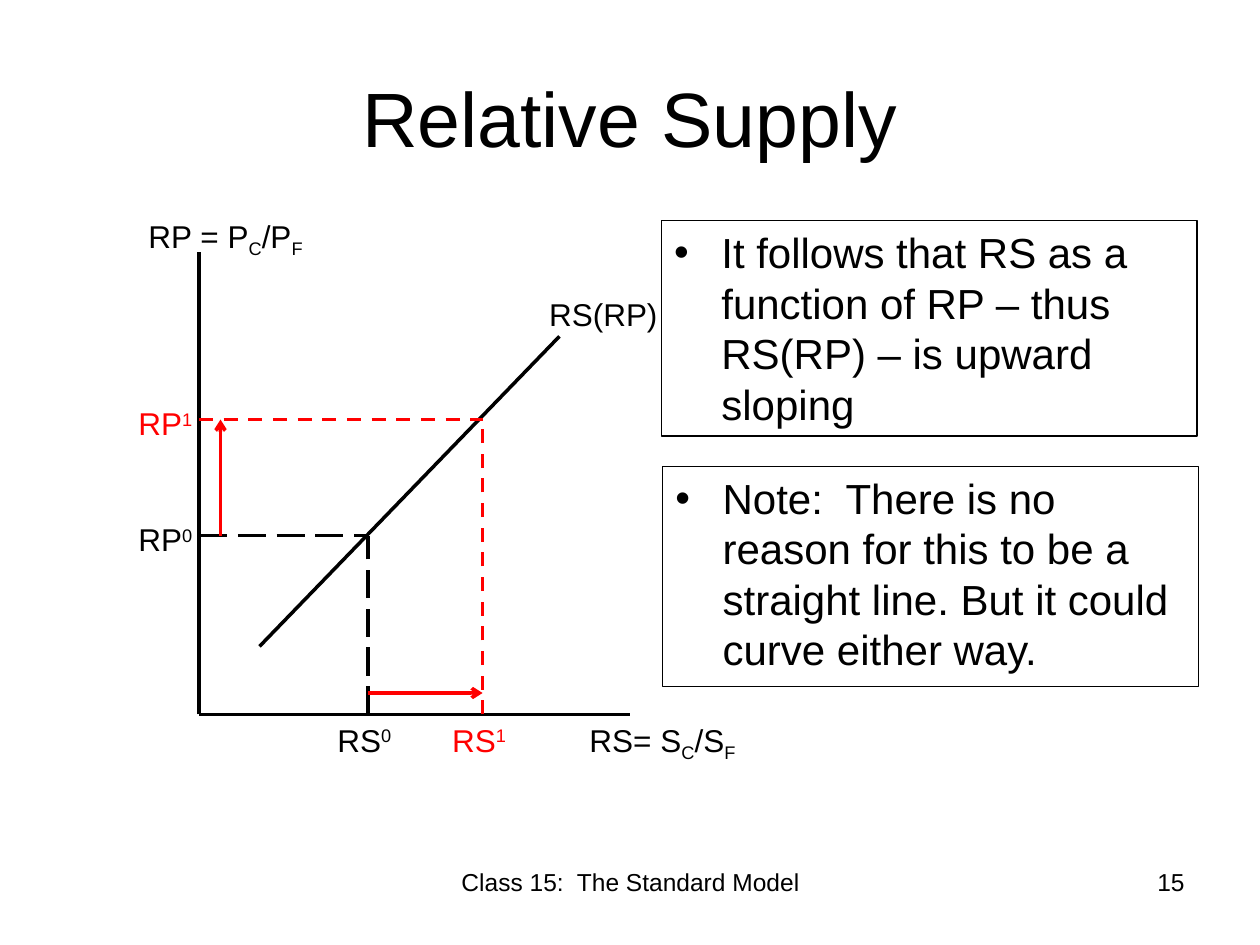
from lxml import etree
from pptx import Presentation
from pptx.dml.color import RGBColor
from pptx.enum.dml import MSO_LINE
from pptx.enum.shapes import MSO_CONNECTOR
from pptx.enum.text import MSO_ANCHOR, MSO_AUTO_SIZE, PP_ALIGN
from pptx.oxml.ns import qn
from pptx.util import Inches, Pt

STRAIGHT = MSO_CONNECTOR.STRAIGHT
DASH, LONG_DASH = MSO_LINE.DASH, MSO_LINE.LONG_DASH
LEFT, CENTER, RIGHT = PP_ALIGN.LEFT, PP_ALIGN.CENTER, PP_ALIGN.RIGHT
TWO_CONTENT = 3
FONT, BLACK, RED = "Arial", "000000", "FF0000"
SUB, SUPER = -25, 30

TITLE = ("Relative Supply", (0.5, 0.3, 9, 1.25))
NOTES = [
    ("It follows that RS as a function of RP – thus RS(RP) – is upward sloping",
     (5.25, 1.75, 4.25, 1.71)),
    ("Note:  There is no reason for this to be a straight line. "
     "But it could curve either way.", (5.26, 3.7, 4.25, 1.75)),
]
FOOTERS = [
    ("Class 15:  The Standard Model", (3.42, 6.83, 3.17, 0.52), CENTER),
    ("15", (7.17, 6.83, 2.33, 0.52), RIGHT),
]

# Diagram: axes meet at ORIGIN, each equilibrium is a point on the supply curve
ORIGIN = (1.58, 5.67)
AXIS_ENDS = [(5, ORIGIN[1]), (ORIGIN[0], 2)]
CURVE = ((2.06, 5.13), (4.44, 2.67))
EQUILIBRIA = [
    ("0", (2.92, 4.25), BLACK, LONG_DASH),
    ("1", (3.83, 3.33), RED, DASH),
]
AXIS_LABELS = [
    ([("RP = P", 0), ("C", SUB), ("/P", 0), ("F", SUB)], (1.08, 1.67, 1.51, 0.4)),
    ([("RS= S", 0), ("C", SUB), ("/S", 0), ("F", SUB)], (4.58, 5.67, 1.75, 0.4)),
]
CURVE_LABEL = ([("RS(RP)", 0)], (4.26, 2.29, 1.07, 0.4))


def color(hex_code):
    return RGBColor.from_string(hex_code)


def place(shape, area):
    shape.left, shape.top, shape.width, shape.height = map(Inches, area)


def format_text(shape, size, hex_code=BLACK, align=LEFT):
    for paragraph in shape.text_frame.paragraphs:
        paragraph.alignment = align
        for span in paragraph.runs:
            span.font.name = FONT
            span.font.size = Pt(size)
            span.font.color.rgb = color(hex_code)


def add_label(page, spans, area, size=18, hex_code=BLACK, align=LEFT, wrap=True):
    """Add a text box from (text, baseline shift in percent) pairs."""
    box = page.shapes.add_textbox(*map(Inches, area))
    box.text_frame.word_wrap = wrap
    for text, shift in spans:
        span = box.text_frame.paragraphs[0].add_run()
        span.text = text
        if shift:
            span.font._element.set("baseline", str(shift * 1000))
    format_text(box, size, hex_code, align)


def add_line(page, start, end, hex_code=BLACK, dash=None, arrow=False):
    line = page.shapes.add_connector(STRAIGHT, *map(Inches, (*start, *end)))
    line.line.color.rgb = color(hex_code)
    line.line.width = Pt(2)
    if dash:
        line.line.dash_style = dash
    properties = line._element.spPr
    if arrow:
        etree.SubElement(properties.find(qn("a:ln")), qn("a:tailEnd"), type="arrow")
    etree.SubElement(properties, qn("a:effectLst"))


def add_diagram(page):
    axis_x, axis_y = ORIGIN
    for end in AXIS_ENDS:
        add_line(page, ORIGIN, end)
    add_line(page, *CURVE)
    for index, (x, y), hex_code, dash in EQUILIBRIA:
        add_line(page, (axis_x, y), (x, y), hex_code, dash)
        add_line(page, (x, axis_y), (x, y), hex_code, dash)
        add_label(page, [("RP", 0), (index, SUPER)], (1, y - 0.17, 0.72, 0.4),
                  hex_code=hex_code)
        add_label(page, [("RS", 0), (index, SUPER)], (x - 0.34, axis_y, 0.72, 0.4),
                  hex_code=hex_code)
    (x0, y0), (x1, y1) = [point for _, point, _, _ in EQUILIBRIA]
    add_line(page, (x0, axis_y - 0.17), (x1, axis_y - 0.17), RED, arrow=True)
    add_line(page, (axis_x + 0.17, y0), (axis_x + 0.17, y1), RED, arrow=True)
    for spans, area in AXIS_LABELS:
        add_label(page, spans, area)
    add_label(page, *CURVE_LABEL, wrap=False)


def main():
    deck = Presentation()
    deck.slide_width, deck.slide_height = Inches(10), Inches(7.5)
    page = deck.slides.add_slide(deck.slide_layouts[TWO_CONTENT])
    title, *bodies = page.placeholders

    title.text_frame.text, area = TITLE
    place(title, area)
    format_text(title, 44, align=CENTER)

    for body, (text, area) in zip(bodies, NOTES):
        place(body, area)
        body.text_frame.text = text
        body.text_frame.auto_size = MSO_AUTO_SIZE.NONE
        body.text_frame.vertical_anchor = MSO_ANCHOR.TOP
        body.line.color.rgb = color(BLACK)
        body.line.width = Pt(0.75)
        format_text(body, 24)

    add_diagram(page)
    for text, area, align in FOOTERS:
        add_label(page, [(text, 0)], area, size=14, align=align)
    deck.save("out.pptx")


if __name__ == "__main__":
    main()
